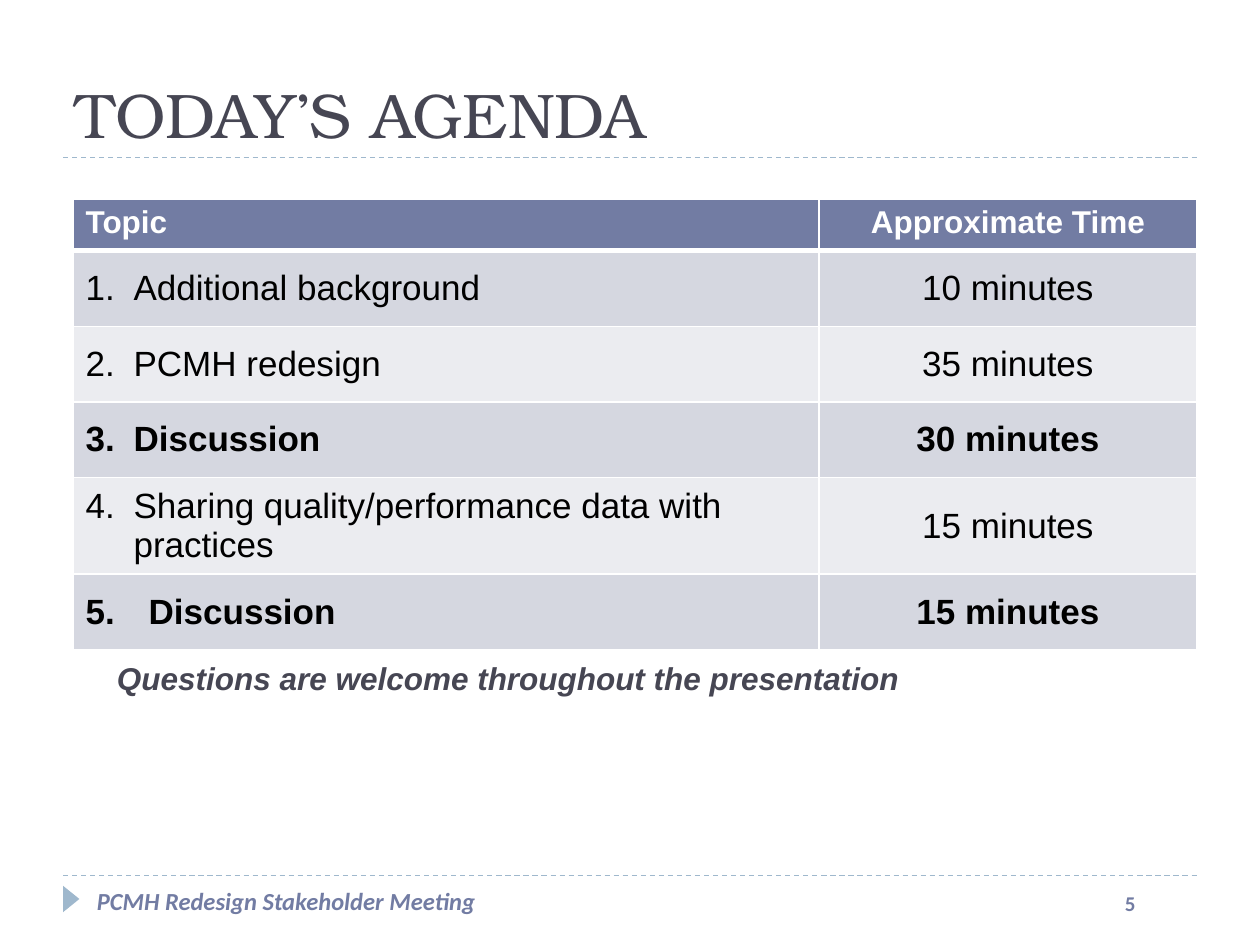
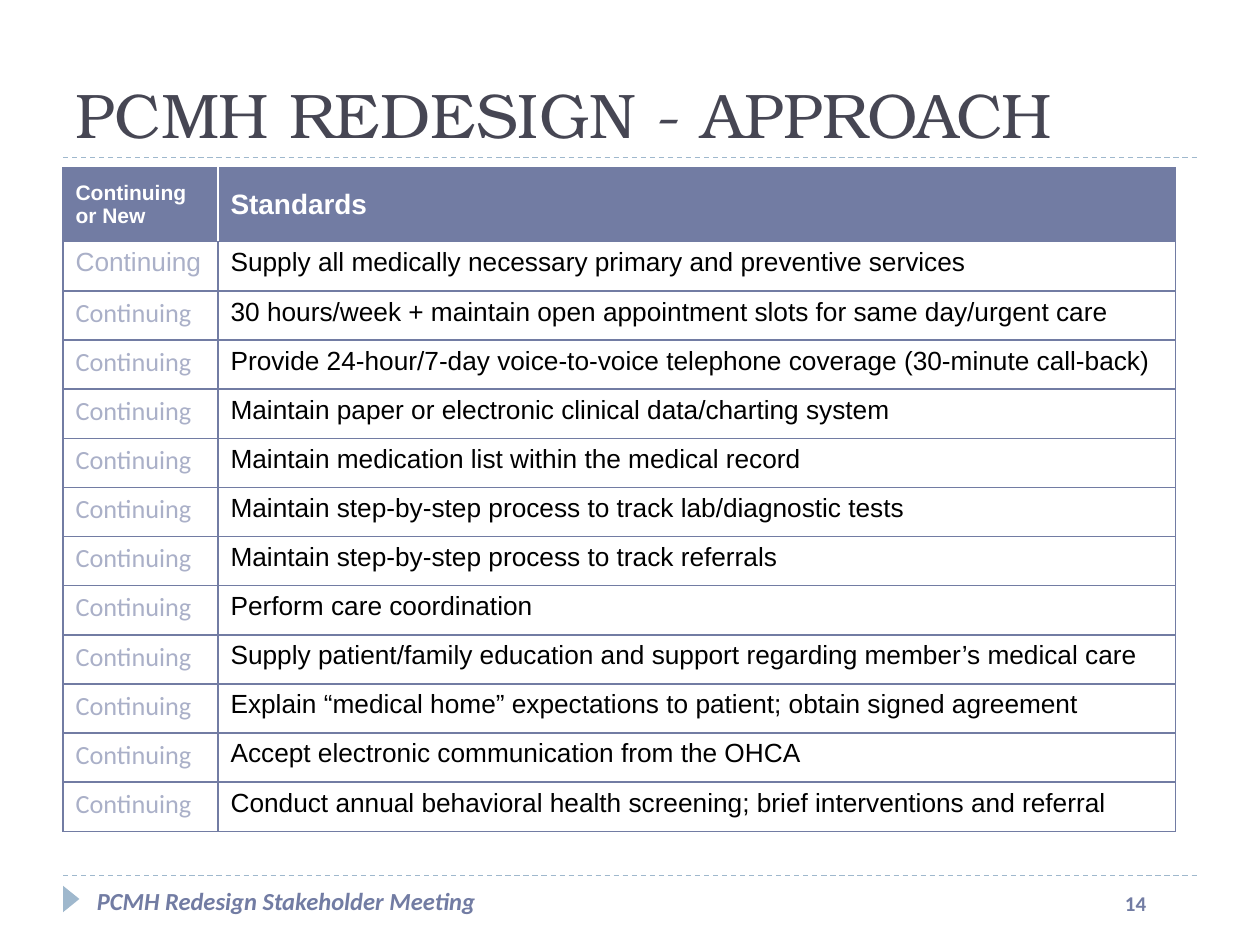
from dataclasses import dataclass
from lxml.etree import SubElement as Sub
from pptx import Presentation
from pptx.dml.color import RGBColor as RGB
from pptx.enum.dml import MSO_LINE as Dash
from pptx.enum.shapes import MSO_CONNECTOR as Link, MSO_SHAPE as Shape
from pptx.enum.text import MSO_ANCHOR as Anchor, PP_ALIGN as Align
from pptx.oxml.ns import qn
from pptx.util import Inches, Pt

FOOTER = "PCMH Redesign Stakeholder Meeting"

AGENDA = {
    "title": "TODAY’S AGENDA",
    "page": 5,
    "head": ("Topic", "Approximate Time"),
    # topic, minutes, bold, indent
    "rows": [
        ("Additional background", 10, False, 0.38),
        ("PCMH redesign", 35, False, 0.38),
        ("Discussion", 30, True, 0.38),
        ("Sharing quality/performance data with practices", 15, False, 0.38),
        ("Discussion", 15, True, 0.5),
    ],
    "note": "Questions are welcome throughout the presentation",
}

APPROACH = {
    "title": "PCMH REDESIGN - APPROACH",
    "page": 14,
    "head": ("Continuing or New", "Standards"),
    "status": "Continuing",
    "rows": [
        "Supply all medically necessary primary and preventive services",
        "30 hours/week + maintain open appointment slots for same day/urgent care",
        "Provide 24-hour/7-day voice-to-voice telephone coverage (30-minute call-back)",
        "Maintain paper or electronic clinical data/charting system",
        "Maintain medication list within the medical record",
        "Maintain step-by-step process to track lab/diagnostic tests",
        "Maintain step-by-step process to track referrals",
        "Perform care coordination",
        "Supply patient/family education and support regarding member’s medical care",
        "Explain “medical home” expectations to patient; obtain signed agreement",
        "Accept electronic communication from the OHCA",
        "Conduct annual behavioral health screening; brief interventions and referral",
    ],
}


@dataclass(frozen=True)
class Theme:
    main: str = "727CA3"
    pale: str = "9FB8CD"
    dark: str = "464653"
    faded: str = "AAB0C8"
    white: str = "FFFFFF"
    black: str = "000000"
    bands: tuple = ("D5D7E0", "EBECF0")
    serif: str = "TeX Gyre Bonum"
    sans: str = "Arial"
    foot: str = "Calibri"
    title: int = 36
    large: int = 20
    medium: int = 18
    column: int = 16
    row: int = 15
    footer: int = 14
    small: int = 12


T = Theme()


def write(frame, text, size, color, font=T.sans, bold=False, italic=False,
          align=Align.LEFT):
    para = frame.paragraphs[0]
    para.alignment = align
    run = para.add_run()
    run.text = text
    run.font.name, run.font.size = font, Pt(size)
    run.font.bold, run.font.italic = bold, italic
    run.font.color.rgb = RGB.from_string(color)
    return para


def label(slide, text, box, anchor=Anchor.TOP, **style):
    frame = slide.shapes.add_textbox(*map(Inches, box)).text_frame
    frame.word_wrap = True
    frame.vertical_anchor = anchor
    write(frame, text, **style)


def rule(slide, y):
    line = slide.shapes.add_connector(
        Link.STRAIGHT, Inches(0.5), Inches(y), Inches(9.5), Inches(y))
    line.line.color.rgb = RGB.from_string(T.pale)
    line.line.width = Pt(0.75)
    line.line.dash_style = Dash.DASH
    Sub(line._element.spPr, qn("a:effectLst"))


def number(para, start, indent):
    """Make the paragraph an automatically numbered item."""
    props = para._p.get_or_add_pPr()
    props.set("marL", str(Inches(indent)))
    props.set("indent", str(-Inches(indent)))
    Sub(props, qn("a:buAutoNum"), type="arabicPeriod", startAt=str(start))


def paint(cell, edges, fill=None):
    """Draw edges, given as (colour, points) for L, R, T and B, then fill."""
    props = cell._tc.get_or_add_tcPr()
    for side, (color, width) in zip("LRTB", edges):
        line = Sub(props, qn(f"a:ln{side}"), w=str(Pt(width)))
        Sub(Sub(line, qn("a:solidFill")), qn("a:srgbClr"), val=color)
    if fill:
        cell.fill.solid()
        cell.fill.fore_color.rgb = RGB.from_string(fill)
    else:
        cell.fill.background()


def grid(slide, left, top, cols, rows):
    box = map(Inches, (left, top, sum(cols), sum(rows)))
    table = slide.shapes.add_table(len(rows), len(cols), *box).table
    table.first_row = table.horz_banding = False
    for col, width in zip(table.columns, cols):
        col.width = Inches(width)
    for row, height in zip(table.rows, rows):
        row.height = Inches(height)
    return table


def base(deck, data):
    """Add a slide with the shared title, rules and footer."""
    slide = deck.slides.add_slide(deck.slide_layouts[6])
    for y in (6.95, 1.25):
        rule(slide, y)
    mark = slide.shapes.add_shape(
        Shape.ISOSCELES_TRIANGLE, *map(Inches, (0.46, 7.07, 0.21, 0.13)))
    mark.rotation = 90
    mark.shadow.inherit = False
    mark.fill.solid()
    mark.fill.fore_color.rgb = RGB.from_string(T.pale)
    mark.line.fill.background()
    label(slide, str(data["page"]), (8.83, 7.02, 0.58, 0.4),
          size=T.small, color=T.main, font=T.foot, bold=True)
    label(slide, FOOTER, (0.67, 6.98, 4.5, 0.52),
          size=T.footer, color=T.main, font=T.foot, bold=True, italic=True)
    label(slide, data["title"], (0.5, 0.17, 9, 1.08), Anchor.BOTTOM,
          size=T.title, color=T.dark, font=T.serif)
    return slide


def agenda(deck, data):
    slide = base(deck, data)
    rows = data["rows"]
    table = grid(slide, 0.58, 1.58, (5.92, 3), [0.41] + [0.6] * len(rows))
    thin, thick = (T.white, 1), (T.white, 3)
    aligns = (Align.LEFT, Align.CENTER)
    for c, text in enumerate(data["head"]):
        cell = table.cell(0, c)
        paint(cell, (thin, thin, thin, thick), T.main)
        write(cell.text_frame, text, T.medium, T.white, bold=True,
              align=aligns[c])
    for r, (topic, time, bold, indent) in enumerate(rows, 1):
        for c, text in enumerate((topic, f"{time} minutes")):
            cell = table.cell(r, c)
            cell.vertical_anchor = Anchor.MIDDLE
            above = thick if r == 1 else thin
            paint(cell, (thin, thin, above, thin), T.bands[(r - 1) % 2])
            para = write(cell.text_frame, text, T.large, T.black, bold=bold,
                         align=aligns[c])
            if c == 0:
                number(para, r, indent)
    label(slide, data["note"], (0.83, 5.18, 6.45, 0.4),
          size=T.medium, color=T.dark, bold=True, italic=True)


def approach(deck, data):
    slide = base(deck, data)
    rows = data["rows"]
    table = grid(slide, 0.5, 1.33, (1.23, 7.6), [0.59] + [0.39] * len(rows))
    outer, inner, gap = (T.main, 0.75), (T.main, 1), (T.white, 1)
    for c, text in enumerate(data["head"]):
        cell = table.cell(0, c)
        cell.vertical_anchor = Anchor.MIDDLE
        sides = (gap, outer) if c else (outer, gap)
        paint(cell, (*sides, outer, outer), T.main)
        write(cell.text_frame, text, T.column if c else T.small, T.white,
              bold=True)
    for r, text in enumerate(rows, 1):
        above = outer if r == 1 else inner
        below = outer if r == len(rows) else inner
        state, item = table.cell(r, 0), table.cell(r, 1)
        paint(state, (outer, inner, above, below))
        paint(item, (inner, outer, above, below))
        write(state.text_frame, data["status"], T.row, T.faded,
              font=T.sans if r == 1 else T.foot)
        write(item.text_frame, text, T.row, T.black)


def main():
    deck = Presentation()
    deck.slide_width, deck.slide_height = Inches(10), Inches(7.5)
    agenda(deck, AGENDA)
    approach(deck, APPROACH)
    deck.save("out.pptx")


if __name__ == "__main__":
    main()
